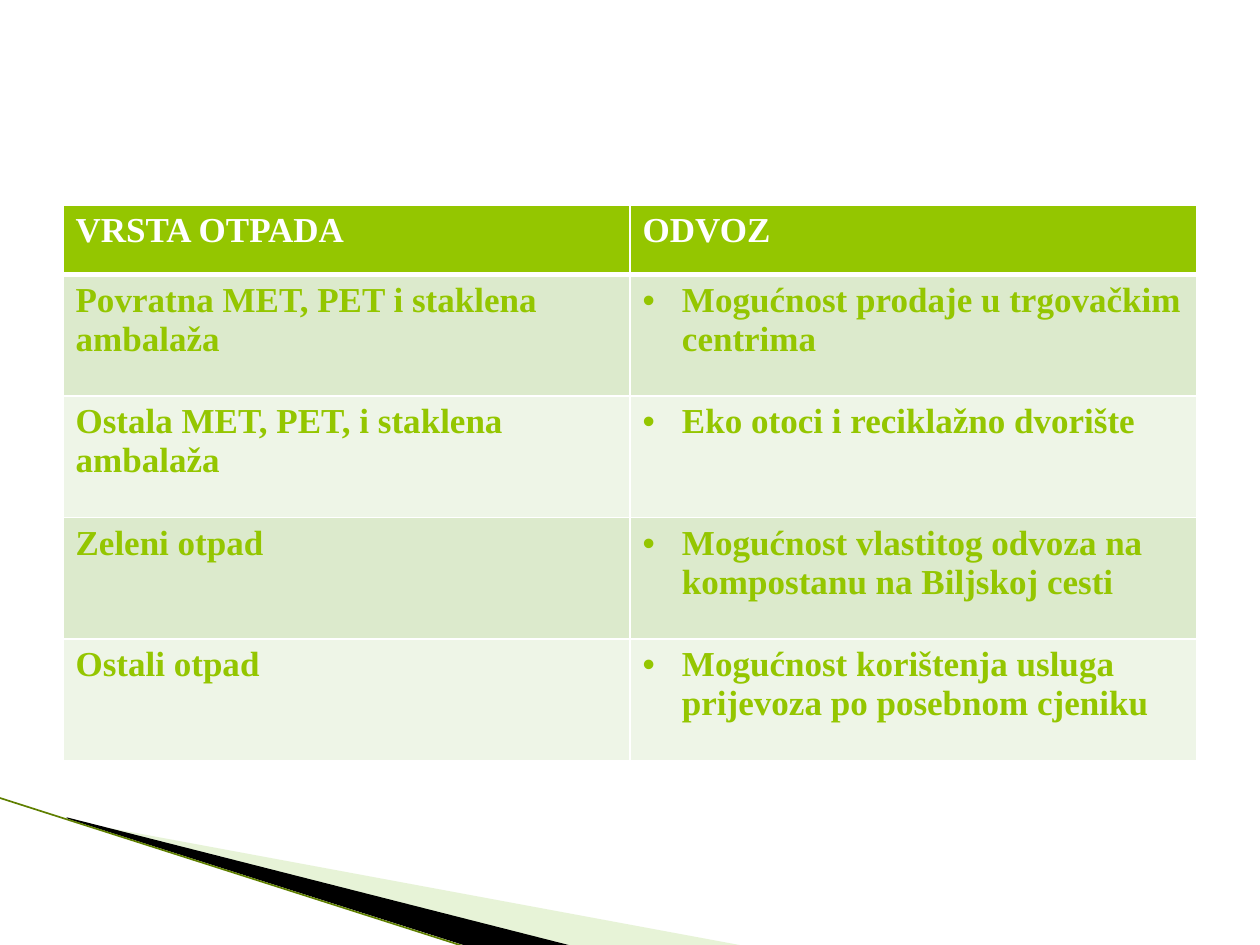
from lxml import etree
from pptx import Presentation
from pptx.dml.color import RGBColor
from pptx.oxml.ns import qn
from pptx.util import Pt

HEADINGS = ("VRSTA OTPADA", "ODVOZ")
WASTE = [
    ("Povratna MET, PET i staklena ambalaža", "Mogućnost prodaje u trgovačkim centrima"),
    ("Ostala MET, PET, i staklena ambalaža", "Eko otoci i reciklažno dvorište"),
    ("Zeleni otpad", "Mogućnost vlastitog odvoza na kompostanu na Biljskoj cesti"),
    ("Ostali otpad", "Mogućnost korištenja usluga prijevoza po posebnom cjeniku"),
]
THEME = dict(font="Times New Roman", size=20, green="94C600", white="FFFFFF",
             bands=("DCEACC", "EEF5E7"), pale="C3E19D", black="000000", edge="5F7F00")
TABLE = dict(left=36, top=117, column=324, header=40, row=69.4)
BULLET_INDENT = 22.5
# Corner wedges: colour, opacity in percent, outline points
WEDGES = [
    (THEME["pale"], 40, [(39.6, 468.7), (428.4, 540.7), (328.3, 540.7), (39.6, 468)]),
    (THEME["black"], 100, [(38.2, 467.3), (329, 540.7), (267.8, 541.4), (38.9, 468)]),
]
EDGE = [(-0.7, 455.8), (267.1, 541.4)]


def rgb(name):
    return RGBColor.from_string(name)


def add_wedge(slide, colour, opacity, points):
    builder = slide.shapes.build_freeform(*points[0], scale=float(Pt(1)))
    builder.add_line_segments(points[1:], close=True)
    wedge = builder.convert_to_shape()
    wedge.shadow.inherit = False
    wedge.fill.solid()
    wedge.fill.fore_color.rgb = rgb(colour)
    wedge.line.fill.background()
    if opacity < 100:
        fill = wedge._element.spPr.find(qn("a:solidFill"))
        etree.SubElement(fill[0], qn("a:alpha"), val=str(opacity * 1000))


def add_edge(slide):
    (x1, y1), (x2, y2) = EDGE
    edge = slide.shapes.add_connector(1, Pt(x1), Pt(y1), Pt(x2), Pt(y2))
    edge.line.color.rgb = rgb(THEME["edge"])
    edge.line.width = Pt(0.95)
    etree.SubElement(edge._element.spPr, qn("a:effectLst"))


def set_borders(cell, top, bottom):
    properties = cell._tc.get_or_add_tcPr()
    widths = dict(lnL=1, lnR=1, lnT=top, lnB=bottom)
    for index, (side, width) in enumerate(widths.items()):
        border = etree.Element(qn(f"a:{side}"), w=str(Pt(width)))
        fill = etree.SubElement(border, qn("a:solidFill"))
        etree.SubElement(fill, qn("a:srgbClr"), val=THEME["white"])
        properties.insert(index, border)


def add_bullet(paragraph):
    properties = paragraph._p.get_or_add_pPr()
    indent = Pt(BULLET_INDENT)
    properties.set("marL", str(indent))
    properties.set("indent", str(-indent))
    etree.SubElement(properties, qn("a:buFont"), typeface="Arial")
    etree.SubElement(properties, qn("a:buChar"), char="•")


def fill_cell(cell, wording, row, column):
    heading = row == 0
    cell.fill.solid()
    cell.fill.fore_color.rgb = rgb(THEME["green"] if heading else THEME["bands"][(row - 1) % 2])
    set_borders(cell, top=3 if row == 1 else 1, bottom=3 if heading else 1)
    cell.text = wording
    paragraph = cell.text_frame.paragraphs[0]
    if column == 1 and not heading:
        add_bullet(paragraph)
    font = paragraph.font
    font.name, font.size, font.bold = THEME["font"], Pt(THEME["size"]), True
    font.color.rgb = rgb(THEME["white"] if heading else THEME["green"])


def add_waste_table(slide):
    rows = [HEADINGS, *WASTE]
    heights = [TABLE["header"]] + [TABLE["row"]] * len(WASTE)
    table = slide.shapes.add_table(
        len(rows), len(HEADINGS), Pt(TABLE["left"]), Pt(TABLE["top"]),
        Pt(TABLE["column"] * len(HEADINGS)), Pt(sum(heights))).table
    for row, (wordings, height) in enumerate(zip(rows, heights)):
        table.rows[row].height = Pt(height)
        for column, wording in enumerate(wordings):
            fill_cell(table.cell(row, column), wording, row, column)


def main():
    deck = Presentation()
    deck.slide_width, deck.slide_height = Pt(720), Pt(540)
    slide = deck.slides.add_slide(deck.slide_layouts[6])
    for wedge in WEDGES:
        add_wedge(slide, *wedge)
    add_edge(slide)
    add_waste_table(slide)
    deck.save("out.pptx")


if __name__ == "__main__":
    main()
